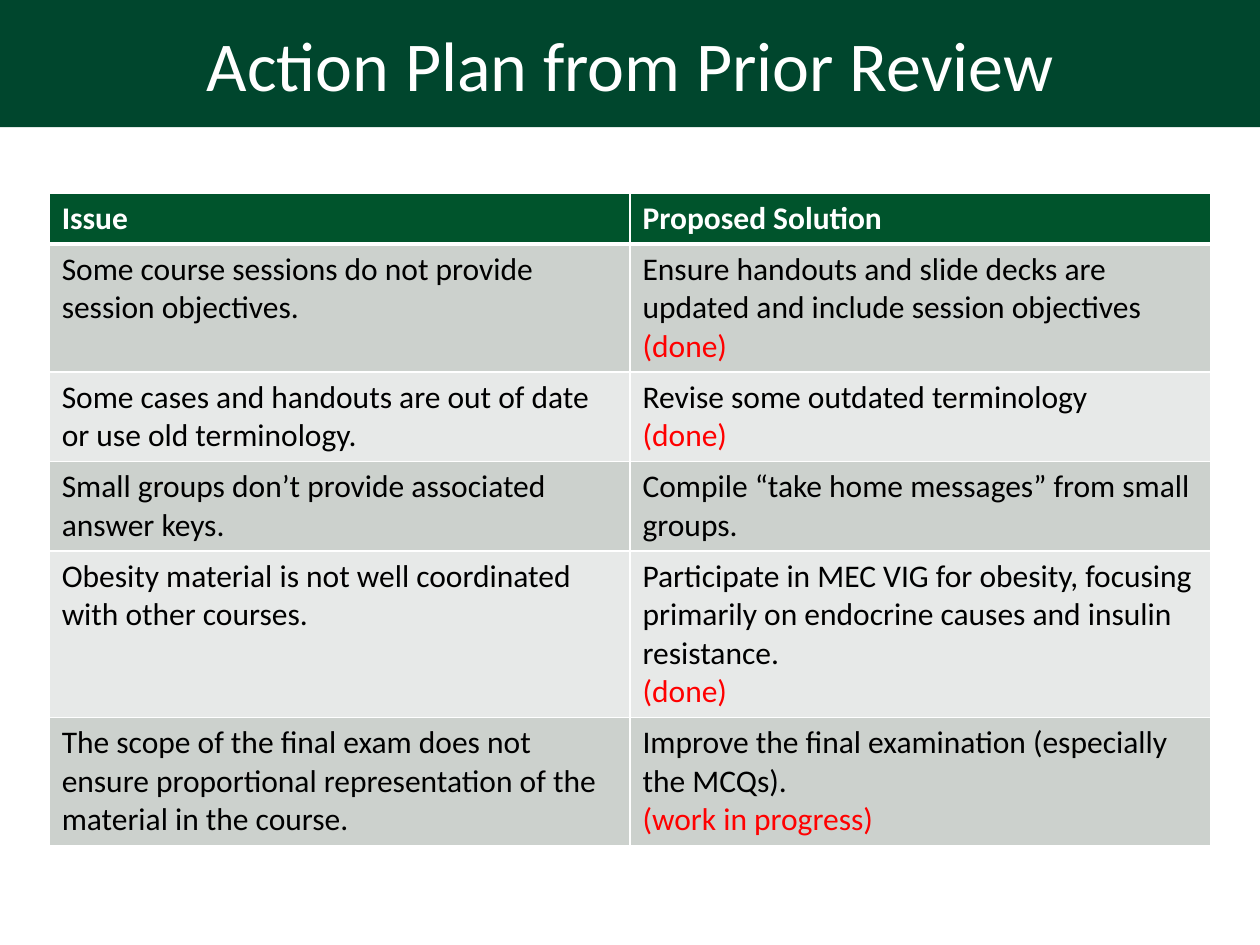
from lxml import etree
from pptx import Presentation
from pptx import util as u
from pptx.dml.color import RGBColor
from pptx.enum import text
from pptx.oxml.ns import qn

WHITE = RGBColor(0xFF, 0xFF, 0xFF)
BLACK = RGBColor(0x00, 0x00, 0x00)
RED = RGBColor(0xFF, 0x00, 0x00)
BANNER_GREEN = RGBColor(0x00, 0x46, 0x2D)
HEADER_GREEN = RGBColor(0x00, 0x54, 0x2C)
BAND_COLORS = (RGBColor(0xCC, 0xD1, 0xCD), RGBColor(0xE7, 0xE9, 0xE8))

HEADINGS = ("Issue", "Proposed Solution")
# Issue, solution, status, whether the status starts its own paragraph
ACTIONS = [
    ("Some course sessions do not provide session objectives.",
     "Ensure handouts and slide decks are updated and include session objectives ",
     "(done)", False),
    ("Some cases and handouts are out of date or use old terminology.",
     "Revise some outdated terminology", "(done)", True),
    ("Small groups don’t provide associated answer keys.",
     "Compile “take home messages” from small groups.", None, False),
    ("Obesity material is not well coordinated with other courses.",
     "Participate in MEC VIG for obesity, focusing primarily on endocrine "
     "causes and insulin resistance.", "(done)", True),
    ("The scope of the final exam does not ensure proportional representation "
     "of the material in the course.",
     "Improve the final examination (especially the MCQs).",
     "(work in progress)", True),
]


class SlideBuilder:
    title_format = {"name": "Calibri", "size": u.Pt(40), "bold": False}
    cell_format = {"name": "Calibri", "size": u.Pt(18), "bold": False}

    def __init__(self, slide):
        self.slide = slide

    def add_run(self, paragraph, words, color, style):
        run = paragraph.add_run()
        run.text = words
        for name, value in style.items():
            setattr(run.font, name, value)
        run.font.color.rgb = color

    def title(self, words, left, top, width, height):
        shape = self.slide.shapes.title
        bounds = {"left": left, "top": top, "width": width, "height": height}
        for name, value in bounds.items():
            setattr(shape, name, u.Pt(value))
        shape.fill.solid()
        shape.fill.fore_color.rgb = BANNER_GREEN
        frame = shape.text_frame
        frame.auto_size = text.MSO_AUTO_SIZE.NONE
        frame.vertical_anchor = text.MSO_ANCHOR.MIDDLE
        paragraph = frame.paragraphs[0]
        paragraph.alignment = text.PP_ALIGN.CENTER
        self.add_run(paragraph, words, WHITE, self.title_format)

    def table(self, rows, columns, left, top, width, height):
        bounds = [u.Pt(value) for value in (left, top, width, height)]
        return self.slide.shapes.add_table(rows, columns, *bounds).table

    def cell(self, cell, paragraphs, fill, bold=False, top=1, bottom=1):
        """Fill a cell; each paragraph is a list of (words, color) pairs."""
        borders = {"a:lnL": 1, "a:lnR": 1, "a:lnT": top, "a:lnB": bottom}
        properties = cell._tc.get_or_add_tcPr()
        for tag, weight in borders.items():
            line = etree.SubElement(properties, qn(tag), w=str(u.Pt(weight)))
            solid = etree.SubElement(line, qn("a:solidFill"))
            etree.SubElement(solid, qn("a:srgbClr"), val=str(WHITE))
        cell.fill.solid()
        cell.fill.fore_color.rgb = fill
        frame = cell.text_frame
        for index, runs in enumerate(paragraphs):
            paragraph = frame.add_paragraph() if index else frame.paragraphs[0]
            for words, color in runs:
                self.add_run(paragraph, words, color, {**self.cell_format, "bold": bold})


def main():
    presentation = Presentation()
    presentation.slide_width, presentation.slide_height = u.Pt(720), u.Pt(540)
    slide = presentation.slides.add_slide(presentation.slide_layouts[5])
    builder = SlideBuilder(slide)

    # Title banner
    builder.title("Action Plan from Prior Review", 0, 0, 720, 72.72)

    # Table header; rows grow to fit their text
    row_count = len(ACTIONS) + 1
    table = builder.table(row_count, 2, 28.08, 110.16, 663.84, row_count * 29.2)
    for column, heading in enumerate(HEADINGS):
        builder.cell(table.cell(0, column), [[(heading, WHITE)]], HEADER_GREEN,
                     bold=True, bottom=3)

    # Banded action rows
    for row, (issue, solution, status, own_paragraph) in enumerate(ACTIONS, 1):
        fill = BAND_COLORS[(row - 1) % 2]
        top = 3 if row == 1 else 1
        answer = [[(solution, BLACK)]]
        if status and own_paragraph:
            answer.append([(status, RED)])
        elif status:
            answer[0].append((status, RED))
        for column, paragraphs in enumerate(([[(issue, BLACK)]], answer)):
            builder.cell(table.cell(row, column), paragraphs, fill, top=top)

    presentation.save("out.pptx")


if __name__ == "__main__":
    main()
